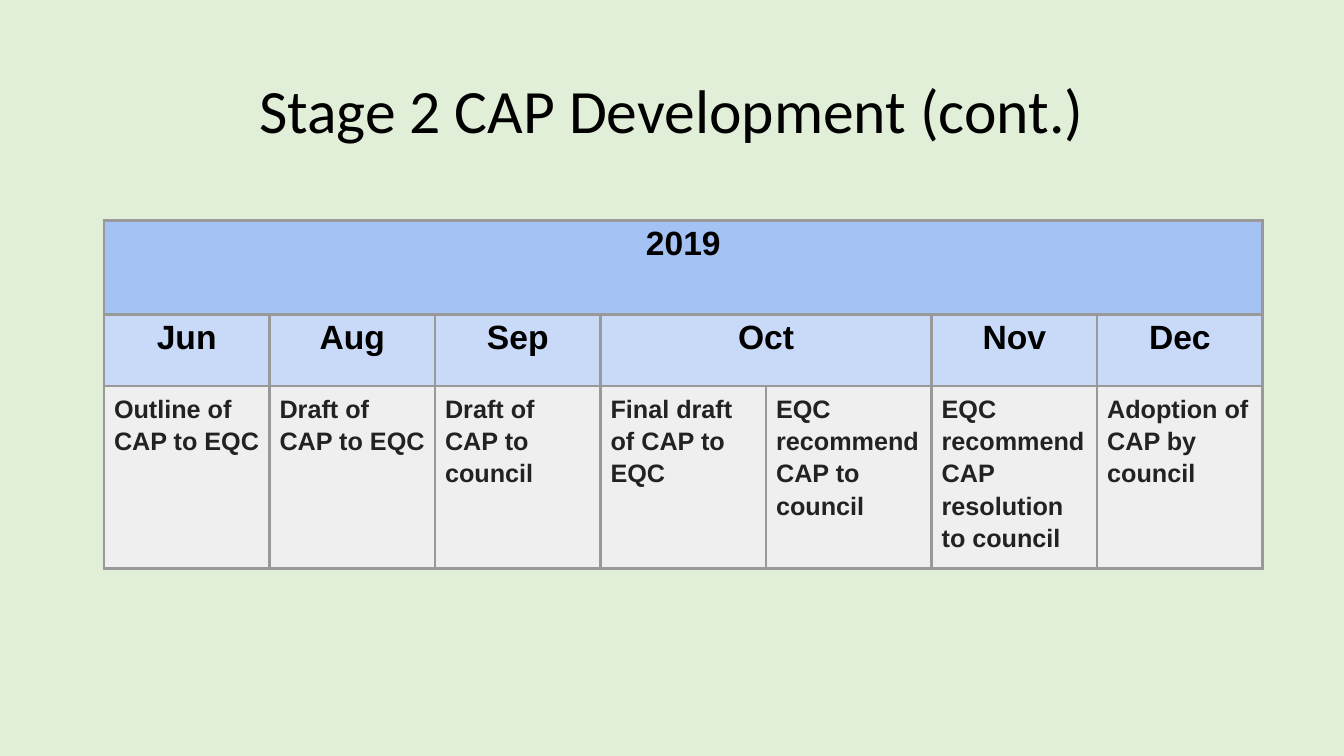
"""Build the Stage 2 CAP Development timeline slide."""
from dataclasses import dataclass

import pptx
import pptx.dml.color
import pptx.enum.text
import pptx.oxml
import pptx.oxml.ns
import pptx.util

Pt = pptx.util.Pt
Align = pptx.enum.text.PP_ALIGN
Anchor = pptx.enum.text.MSO_ANCHOR

TITLE = "Stage 2 CAP Development (cont.)"
YEAR = "2019"
MONTHS = [
    ("Jun", ["Outline of CAP to EQC"]),
    ("Aug", ["Draft of CAP to EQC"]),
    ("Sep", ["Draft of CAP to council"]),
    ("Oct", ["Final draft of CAP to EQC", "EQC recommend\nCAP to council"]),
    ("Nov", ["EQC recommend CAP resolution to council"]),
    ("Dec", ["Adoption of CAP by council"]),
]


@dataclass(frozen=True)
class Theme:
    """Colours, fonts and type sizes."""
    background: str = "E1EFD8"
    year_fill: str = "A4C2F4"
    month_fill: str = "C9DAF8"
    step_fill: str = "EFEFEF"
    border: str = "999999"
    ink: str = "000000"
    step_ink: str = "222222"
    title_font: str = "Calibri"
    table_font: str = "Arial"
    title_size: int = 44
    heading_size: int = 24
    step_size: int = 18


THEME = Theme()
PAGE_SIZE = (960, 540)
TITLE_BOX = (66, 28.75, 828, 104.4)
TABLE_LEFT, TABLE_TOP = 74.25, 157.5
COLUMN_WIDTH = 118.25
ROW_HEIGHTS = (67.2, 51, 130.5)
INSET = 7.2
BORDER_WIDTH = 2.25


def rgb(colour):
    """Return a colour object for a hex string."""
    return pptx.dml.color.RGBColor.from_string(colour)


def style_text(frame, font, size, colour, align, spacing, bold=False):
    """Set margins and give every paragraph the same look."""
    frame.word_wrap = True
    for side in ("left", "right", "top", "bottom"):
        setattr(frame, f"margin_{side}", Pt(INSET))
    for para in frame.paragraphs:
        para.alignment = align
        para.line_spacing = spacing
        para.font.name = font
        para.font.size = Pt(size)
        para.font.bold = bold
        para.font.color.rgb = rgb(colour)


def paint_cell(cell, fill):
    """Fill a cell and draw its four borders."""
    cell.fill.solid()
    cell.fill.fore_color.rgb = rgb(fill)
    properties = cell._tc.get_or_add_tcPr()
    for index, side in enumerate("LRTB"):
        line = pptx.oxml.parse_xml(
            f'<a:ln{side} {pptx.oxml.ns.nsdecls("a")} w="{Pt(BORDER_WIDTH)}">'
            f'<a:solidFill><a:srgbClr val="{THEME.border}"/></a:solidFill></a:ln{side}>'
        )
        properties.insert(index, line)


def write_heading(table, row, first, last, text):
    """Write a centred heading across a span of columns."""
    cell = table.cell(row, first)
    if last > first:
        cell.merge(table.cell(row, last))
    cell.text = text
    style_text(cell.text_frame, THEME.table_font, THEME.heading_size, THEME.ink,
               Align.CENTER, 1.0, True)


def add_title(page):
    """Place and format the title placeholder."""
    title = page.shapes.title
    title.left, title.top, title.width, title.height = map(Pt, TITLE_BOX)
    title.text = TITLE
    title.text_frame.vertical_anchor = Anchor.MIDDLE
    style_text(title.text_frame, THEME.title_font, THEME.title_size, THEME.ink,
               Align.CENTER, 0.9)


def add_timeline(page):
    """Add the table of months and their steps."""
    columns = sum(len(steps) for _, steps in MONTHS)
    table = page.shapes.add_table(
        len(ROW_HEIGHTS), columns, Pt(TABLE_LEFT), Pt(TABLE_TOP),
        Pt(columns * COLUMN_WIDTH), Pt(sum(ROW_HEIGHTS)),
    ).table
    for column in table.columns:
        column.width = Pt(COLUMN_WIDTH)
    fills = (THEME.year_fill, THEME.month_fill, THEME.step_fill)
    for row, height, fill in zip(table.rows, ROW_HEIGHTS, fills):
        row.height = Pt(height)
        for cell in row.cells:
            paint_cell(cell, fill)

    write_heading(table, 0, 0, columns - 1, YEAR)
    first = 0
    for month, steps in MONTHS:
        write_heading(table, 1, first, first + len(steps) - 1, month)
        for column, step in enumerate(steps, first):
            cell = table.cell(2, column)
            cell.text = step
            style_text(cell.text_frame, THEME.table_font, THEME.step_size,
                       THEME.step_ink, Align.LEFT, 1.15, True)
        first += len(steps)


def main():
    """Create the deck and save it."""
    deck = pptx.Presentation()
    deck.slide_width, deck.slide_height = map(Pt, PAGE_SIZE)
    page = deck.slides.add_slide(deck.slide_layouts.get_by_name("Title Only"))
    page.background.fill.solid()
    page.background.fill.fore_color.rgb = rgb(THEME.background)
    add_title(page)
    add_timeline(page)
    deck.save("out.pptx")


if __name__ == "__main__":
    main()
